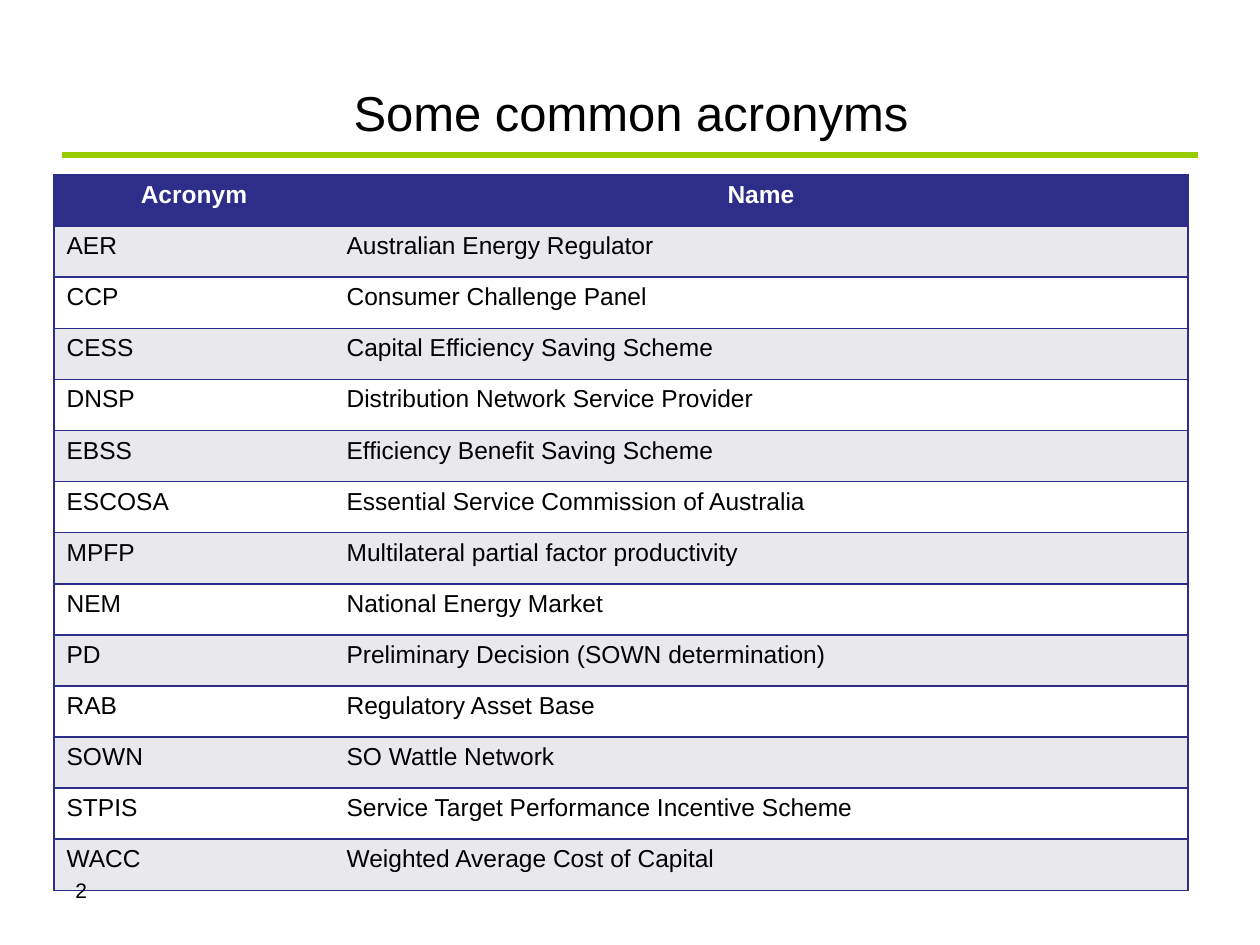
from lxml import etree
from pptx import Presentation
from pptx import util as u
from pptx.dml.color import RGBColor
from pptx.enum import shapes, text
from pptx.oxml.ns import qn

TITLE = "Some common acronyms"
PAGE_NUMBER = "2"
HEADER = ("Acronym", "Name")
ACRONYMS = [
    ("AER", "Australian Energy Regulator"),
    ("CCP", "Consumer Challenge Panel"),
    ("CESS", "Capital Efficiency Saving Scheme"),
    ("DNSP", "Distribution Network Service Provider"),
    ("EBSS", "Efficiency Benefit Saving Scheme"),
    ("ESCOSA", "Essential Service Commission of Australia"),
    ("MPFP", "Multilateral partial factor productivity"),
    ("NEM", "National Energy Market"),
    ("PD", "Preliminary Decision (SOWN determination)"),
    ("RAB", "Regulatory Asset Base"),
    ("SOWN", "SO Wattle Network"),
    ("STPIS", "Service Target Performance Incentive Scheme"),
    ("WACC", "Weighted Average Cost of Capital"),
]

NAVY = RGBColor(0x2D, 0x2D, 0x8A)
GREEN = RGBColor(0x99, 0xCC, 0x00)
GREY = RGBColor(0xE8, 0xE8, 0xED)
WHITE = RGBColor(0xFF, 0xFF, 0xFF)
BLACK = RGBColor(0x00, 0x00, 0x00)

COLUMN_WIDTHS = (280, 854)
TABLE_LEFT, TABLE_TOP, TABLE_HEIGHT = 54, 175, 716


def px(length):
    return round(length * 914400 / 126)


def write(frame, words, size=14, color=BLACK, bold=False, align=text.PP_ALIGN.LEFT):
    frame.word_wrap = True
    paragraph = frame.paragraphs[0]
    paragraph.alignment = align
    run = paragraph.add_run()
    run.text = words
    run.font.name = "Arial"
    run.font.size = u.Pt(size)
    run.font.bold = bold
    run.font.color.rgb = color


def set_borders(cell, visible):
    """Draw the sides named in visible and clear the others."""
    properties = cell._tc.get_or_add_tcPr()
    for side in "LRTB":
        border = etree.SubElement(properties, qn("a:ln" + side), w=str(u.Pt(1)))
        if side in visible:
            fill = etree.SubElement(border, qn("a:solidFill"))
            etree.SubElement(fill, qn("a:srgbClr"), val=str(NAVY))
        else:
            etree.SubElement(border, qn("a:noFill"))


def add_rule(slide):
    rule = slide.shapes.add_connector(
        shapes.MSO_CONNECTOR.STRAIGHT, px(62), px(155), px(1198), px(155))
    rule.line.color.rgb = GREEN
    rule.line.width = u.Pt(3)
    etree.SubElement(rule._element.spPr, qn("a:effectLst"))


def add_title(slide):
    frame = slide.shapes.add_textbox(px(64), px(66), px(1134), px(92)).text_frame
    frame.vertical_anchor = text.MSO_ANCHOR.MIDDLE
    write(frame, TITLE, size=28, align=text.PP_ALIGN.CENTER)


def add_acronym_table(slide):
    rows = [HEADER] + ACRONYMS
    table = slide.shapes.add_table(
        len(rows), len(HEADER), px(TABLE_LEFT), px(TABLE_TOP),
        px(sum(COLUMN_WIDTHS)), px(TABLE_HEIGHT)).table
    for column, width in zip(table.columns, COLUMN_WIDTHS):
        column.width = px(width)
    for r, entry in enumerate(rows):
        table.rows[r].height = px(TABLE_HEIGHT / len(rows))
        for c, words in enumerate(entry):
            cell = table.cell(r, c)
            set_borders(cell, "LTB" if c == 0 else "RTB")
            cell.fill.solid()
            if r == 0:
                cell.fill.fore_color.rgb = NAVY
                write(cell.text_frame, words, color=WHITE, bold=True,
                      align=text.PP_ALIGN.CENTER)
            else:
                cell.fill.fore_color.rgb = GREY if r % 2 else WHITE
                write(cell.text_frame, words)


def add_page_number(slide):
    frame = slide.shapes.add_textbox(px(63), px(848), px(101), px(66)).text_frame
    frame.margin_top = px(30)
    write(frame, PAGE_NUMBER, size=12)


def main():
    deck = Presentation()
    deck.slide_width, deck.slide_height = px(1260), px(945)
    slide = deck.slides.add_slide(deck.slide_layouts[6])
    add_rule(slide)
    add_title(slide)
    add_acronym_table(slide)
    add_page_number(slide)
    deck.save("out.pptx")


if __name__ == "__main__":
    main()
